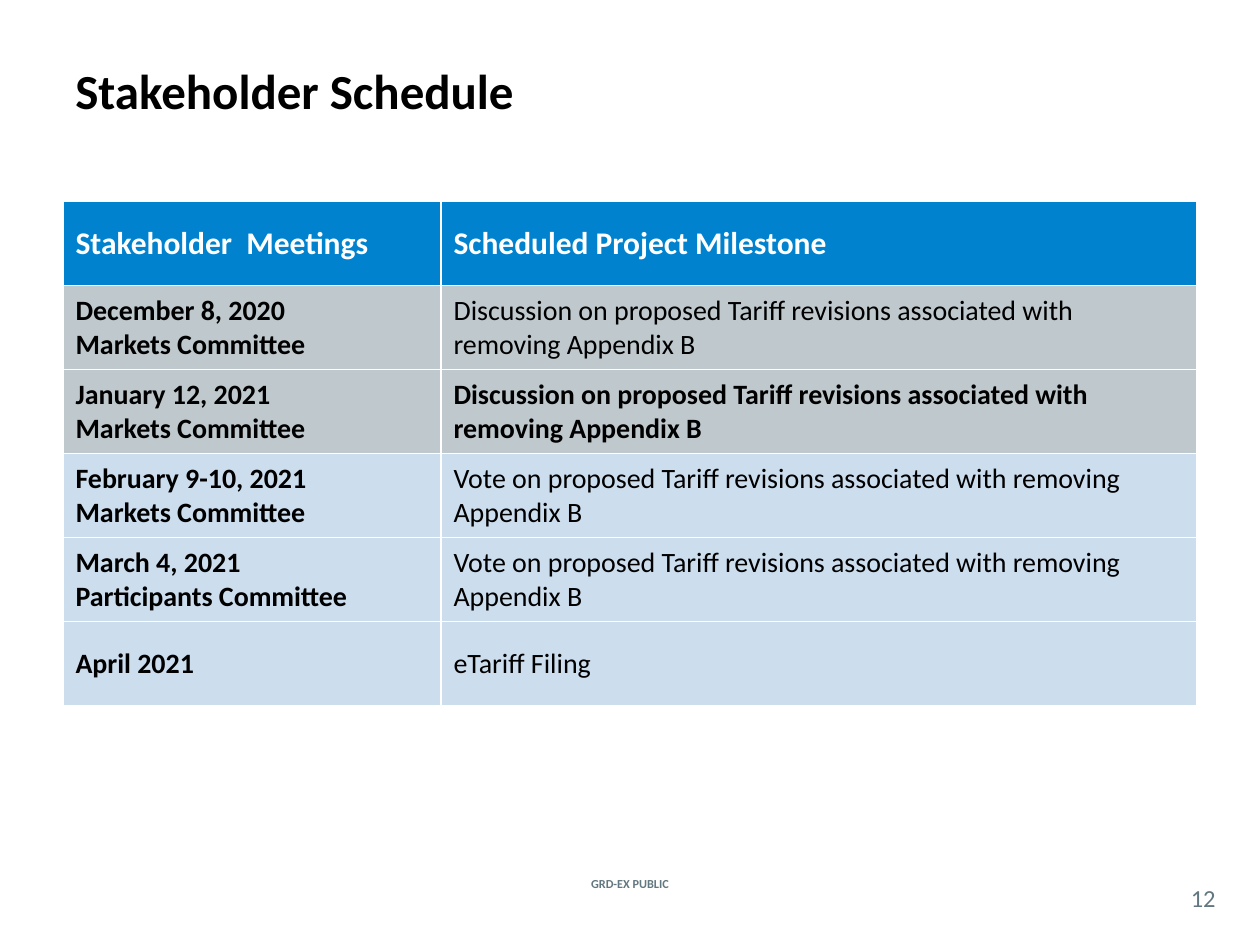
import dataclasses

import pptx
import pptx.dml.color
import pptx.enum.text
import pptx.oxml
import pptx.oxml.ns
import pptx.util

ANCHOR = pptx.enum.text.MSO_ANCHOR
ALIGN = pptx.enum.text.PP_ALIGN


@dataclasses.dataclass(frozen=True)
class Theme:
    font: str = "Calibri"
    ink: str = "000000"
    paper: str = "FFFFFF"
    muted: str = "62777F"
    header: str = "0082CF"
    past: str = "BFC9CD"
    upcoming: str = "CCDDEE"
    title_size: int = 28
    header_size: int = 18
    body_size: int = 16
    number_size: int = 14
    footer_size: int = 7
    border_width: int = 1


THEME = Theme()
WIDTH, HEIGHT = pptx.util.Inches(10), pptx.util.Inches(7.5)

# The table stands on a grid of 20 columns across the page
COLUMN = WIDTH // 20
ROW = pptx.util.Inches(4) // 6

REVISIONS = "proposed Tariff revisions associated with removing Appendix B"
# Meeting lines, milestone, row fill, bold milestone
SCHEDULE = [
    (["December 8, 2020", "Markets Committee"], "Discussion on " + REVISIONS, THEME.past, False),
    (["January 12, 2021", "Markets Committee"], "Discussion on " + REVISIONS, THEME.past, True),
    (["February 9-10, 2021", "Markets Committee"], "Vote on " + REVISIONS, THEME.upcoming, False),
    (["March 4, 2021", "Participants Committee"], "Vote on " + REVISIONS, THEME.upcoming, False),
    (["April 2021"], "eTariff Filing", THEME.upcoming, False),
]


def rgb(value):
    return pptx.dml.color.RGBColor.from_string(value)


def write_lines(frame, lines, size, color, bold=False, align=ALIGN.LEFT):
    for index, line in enumerate(lines):
        para = frame.add_paragraph() if index else frame.paragraphs[0]
        para.text = line
        para.alignment = align
        para.font.name = THEME.font
        para.font.size = pptx.util.Pt(size)
        para.font.bold = bold
        para.font.color.rgb = rgb(color)


def add_label(page, shares, text, size, color, bold=False, align=ALIGN.CENTER, inset=None):
    """Add a text box placed by shares of the page size."""
    left, top, width, height = shares
    box = page.shapes.add_textbox(round(left * WIDTH), round(top * HEIGHT),
                                  round(width * WIDTH), round(height * HEIGHT))
    frame = box.text_frame
    frame.word_wrap = True
    frame.vertical_anchor = ANCHOR.MIDDLE
    if inset is not None:
        frame.margin_left = frame.margin_right = inset
        frame.margin_top = frame.margin_bottom = inset
    write_lines(frame, [text], size, color, bold, align)


def set_borders(cell):
    properties = cell._tc.get_or_add_tcPr()
    width = pptx.util.Pt(THEME.border_width)
    for index, side in enumerate(("lnL", "lnR", "lnT", "lnB")):
        line = pptx.oxml.parse_xml(
            f'<a:{side} {pptx.oxml.ns.nsdecls("a")} w="{width}"><a:solidFill>'
            f'<a:srgbClr val="{THEME.paper}"/></a:solidFill></a:{side}>')
        properties.insert(index, line)


def fill_cell(cell, lines, fill, size, color, bold):
    cell.fill.solid()
    cell.fill.fore_color.rgb = rgb(fill)
    cell.vertical_anchor = ANCHOR.MIDDLE
    set_borders(cell)
    write_lines(cell.text_frame, lines, size, color, bold)


def add_schedule(page):
    table = page.shapes.add_table(len(SCHEDULE) + 1, 2, COLUMN, pptx.util.Inches(1.6),
                                  18 * COLUMN, 6 * ROW).table
    table.columns[0].width, table.columns[1].width = 6 * COLUMN, 12 * COLUMN
    for row in table.rows:
        row.height = ROW

    # Header row
    for index, heading in enumerate(("Stakeholder  Meetings", "Scheduled Project Milestone")):
        fill_cell(table.cell(0, index), [heading], THEME.header,
                  THEME.header_size, THEME.paper, True)

    # Meeting rows
    for index, (meeting, milestone, fill, bold) in enumerate(SCHEDULE, start=1):
        fill_cell(table.cell(index, 0), meeting, fill, THEME.body_size, THEME.ink, True)
        fill_cell(table.cell(index, 1), [milestone], fill, THEME.body_size, THEME.ink, bold)


def main():
    deck = pptx.Presentation()
    deck.slide_width, deck.slide_height = WIDTH, HEIGHT
    page = deck.slides.add_slide(deck.slide_layouts[6])

    # Title and schedule
    add_label(page, (0.05, 0.01, 0.9, 0.17), "Stakeholder Schedule",
              THEME.title_size, THEME.ink, True, ALIGN.LEFT)
    add_schedule(page)

    # Footer and page number
    add_label(page, (0.43, 0.92, 0.14, 0.03), "GRD-EX PUBLIC",
              THEME.footer_size, THEME.muted, True)
    add_label(page, (0.93, 0.93, 0.05, 0.04), "12",
              THEME.number_size, THEME.muted, inset=0)

    deck.save("out.pptx")


if __name__ == "__main__":
    main()
